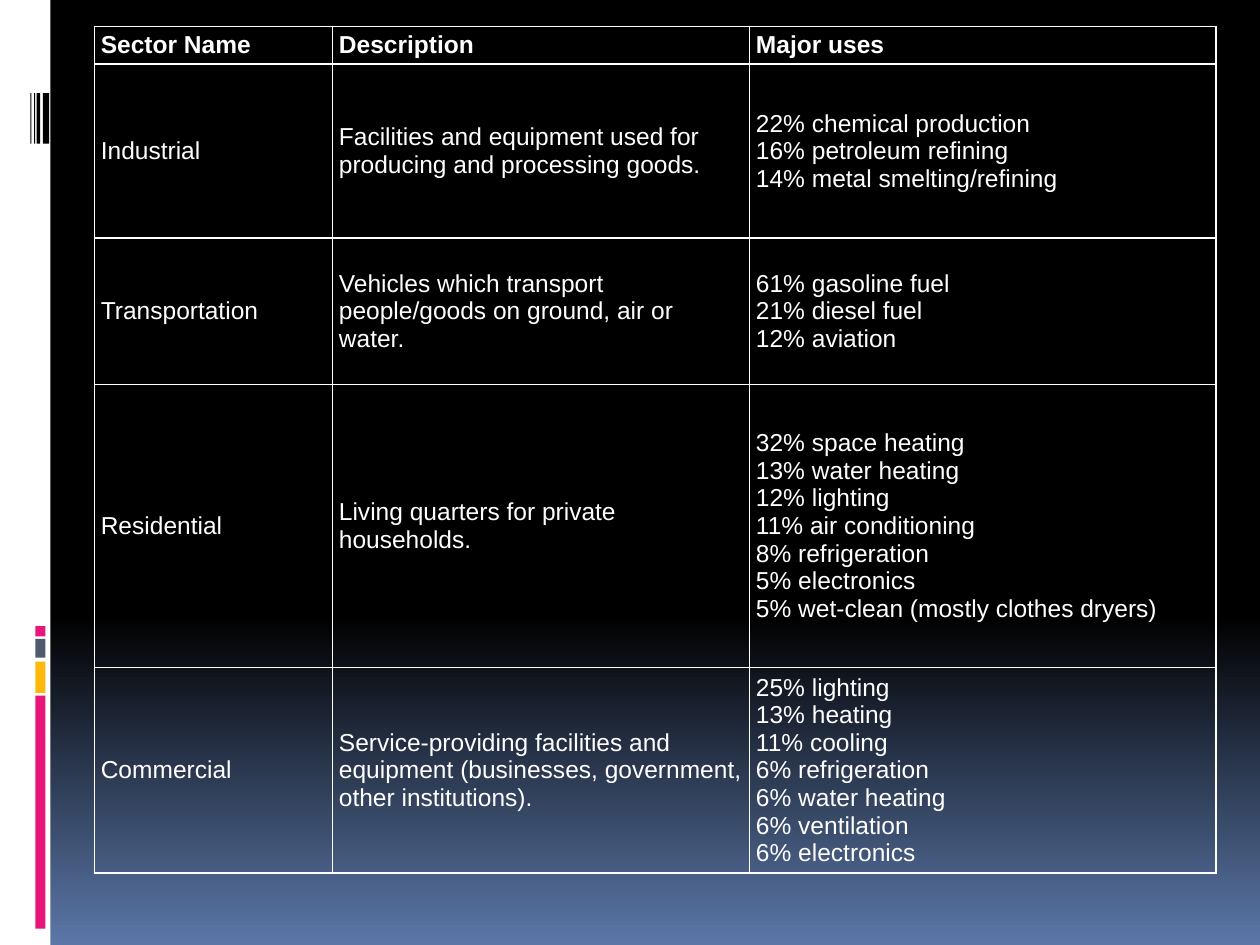
from lxml.etree import SubElement
from pptx import Presentation
from pptx.dml.color import RGBColor
from pptx.enum.shapes import MSO_SHAPE as Shape
from pptx.enum.text import MSO_ANCHOR as Anchor
from pptx.oxml import parse_xml
from pptx.oxml.ns import nsdecls, qn
from pptx.util import Inches, Pt

BARS = [
    (0, 0, 0.4, 7.5, "FFFFFF"),
    (0.28, 5.52, 0.08, 1.85, "EA157A"),
    (0.28, 5.25, 0.08, 0.25, "FEB80A"),
    (0.28, 5.07, 0.08, 0.15, "4E5B6F"),
    (0.28, 4.97, 0.08, 0.08, "EA157A"),
]
CODE = [(0.34, 0.05), (0.29, 0.03), (0.27, 0.01), (0.24, 0.01)]
COLS = [1.89, 3.31, 3.7]
ROWS = [0.3, 1.38, 1.16, 2.25, 1.63]
CELLS = [
    ("Sector Name", "Description", "Major uses"),
    ("Industrial",
     "Facilities and equipment used for producing and processing goods.",
     "22% chemical production\n16% petroleum refining\n14% metal smelting/refining"),
    ("Transportation",
     "Vehicles which transport people/goods on ground, air or water.",
     "61% gasoline fuel\n21% diesel fuel\n12% aviation"),
    ("Residential",
     "Living quarters for private households.",
     "32% space heating\n13% water heating\n12% lighting\n11% air conditioning\n"
     "8% refrigeration\n5% electronics\n5% wet-clean (mostly clothes dryers)"),
    ("Commercial",
     "Service-providing facilities and equipment (businesses, government, "
     "other institutions).",
     "25% lighting\n13% heating\n11% cooling\n6% refrigeration\n"
     "6% water heating\n6% ventilation\n6% electronics"),
]


def tint(code):
    """Turn a hex string into a colour."""
    return RGBColor.from_string(code)


def write(frame, text, font="Arial", size=14, color="FFFFFF", bold=False):
    """Put formatted text in a frame, with newlines as line breaks."""
    para = frame.paragraphs[0]
    para.text = text
    for run in para.runs:
        run.font.name = font
        run.font.size = Pt(size)
        run.font.bold = bold
        run.font.color.rgb = tint(color)
    for gap in para._p.findall(qn("a:br")):
        SubElement(gap, qn("a:rPr"), sz=str(size * 100))


class Deck:
    """Hold the style and the current slide."""

    def __init__(self, line="FFFFFF", width=1):
        """Start a deck with one blank slide."""
        self.line, self.width = line, width
        self.prs = Presentation()
        self.prs.slide_width, self.prs.slide_height = Inches(10), Inches(7.5)
        self.slide = self.prs.slides.add_slide(self.prs.slide_layouts[6])

    def fade(self, start, end, begin):
        """Fill the background with a downward gradient."""
        fill = self.slide.background.fill
        fill.gradient()
        fill.gradient_angle = 270
        for stop, code, pos in zip(fill.gradient_stops, (start, end), (begin, 1)):
            stop.color.rgb = tint(code)
            stop.position = pos

    def bar(self, left, top, width, height, color):
        """Add a plain filled rectangle."""
        box = map(Inches, (left, top, width, height))
        shape = self.slide.shapes.add_shape(Shape.RECTANGLE, *box)
        shape.shadow.inherit = False
        shape.fill.solid()
        shape.fill.fore_color.rgb = tint(color)
        shape.line.fill.background()

    def edge(self, cell):
        """Draw all four borders of a cell."""
        props = cell._tc.get_or_add_tcPr()
        for spot, side in enumerate("LRTB"):
            props.insert(spot, parse_xml(
                f'<a:ln{side} {nsdecls("a")} w="{Pt(self.width)}"><a:solidFill>'
                f'<a:srgbClr val="{self.line}"/></a:solidFill></a:ln{side}>'))

    def table(self, left, top, cols, rows, cells):
        """Add a bordered table with a bold first row."""
        box = map(Inches, (left, top, sum(cols), sum(rows)))
        grid = self.slide.shapes.add_table(len(rows), len(cols), *box).table
        grid.first_row = grid.horz_banding = False
        for col, width in zip(grid.columns, cols):
            col.width = Inches(width)
        for num, (row, height, texts) in enumerate(zip(grid.rows, rows, cells)):
            row.height = Inches(height)
            for cell, text in zip(row.cells, texts):
                cell.fill.background()
                cell.vertical_anchor = Anchor.MIDDLE
                cell.margin_left = cell.margin_right = Inches(0.05)
                cell.margin_top = cell.margin_bottom = Inches(0.03)
                self.edge(cell)
                write(cell.text_frame, text, bold=num == 0)


def main():
    """Build and save the slide."""
    deck = Deck()
    deck.fade("000000", "5B77A8", 0.65)
    for bar in BARS:
        deck.bar(*bar)
    for left, width in CODE:
        deck.bar(left, 0.74, width, 0.4, "000000")
    deck.table(0.75, 0.21, COLS, ROWS, CELLS)
    deck.prs.save("out.pptx")


if __name__ == "__main__":
    main()
